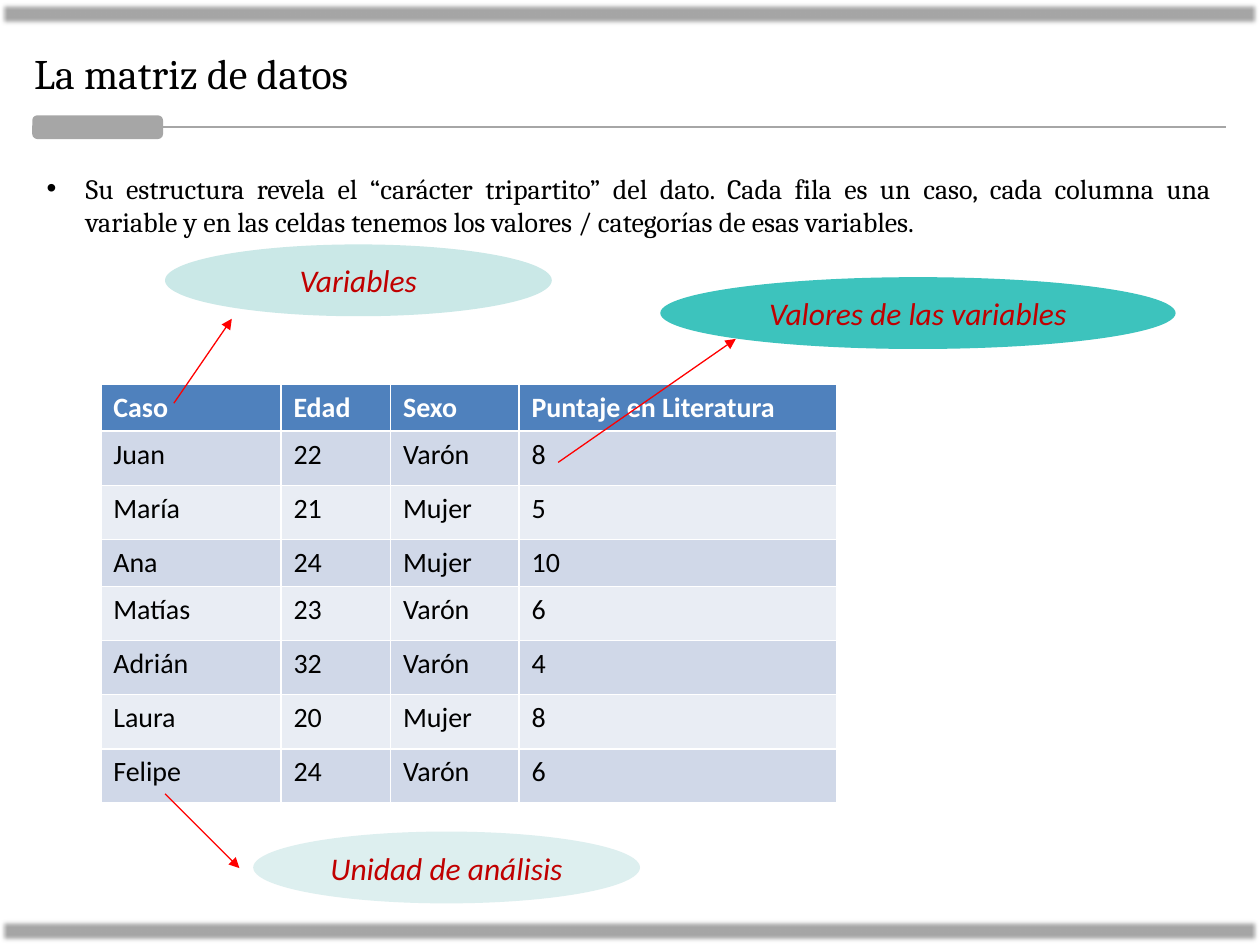
import pptx
import pptx.dml.color
import pptx.enum.shapes
import pptx.enum.text
import pptx.oxml.ns
import pptx.util
from lxml import etree
from pptx.util import Inches

GREY = "A6A6A6"
RED = "FF0000"
SHAPES = pptx.enum.shapes.MSO_SHAPE
ALIGN = pptx.enum.text.PP_ALIGN
ANCHOR = pptx.enum.text.MSO_ANCHOR

COLUMN_WIDTHS = [1.43, 0.87, 1.02, 2.52]
ROW_HEIGHTS = [0.37, 0.43, 0.43, 0.36, 0.43, 0.43, 0.43, 0.43]
CASES = [
    ("Caso", "Edad", "Sexo", "Puntaje en Literatura"),
    ("Juan", "22", "Varón", "8"),
    ("María", "21", "Mujer", "5"),
    ("Ana", "24", "Mujer", "10"),
    ("Matías", "23", "Varón", "6"),
    ("Adrián", "32", "Varón", "4"),
    ("Laura", "20", "Mujer", "8"),
    ("Felipe", "24", "Varón", "6"),
]
CALLOUTS = [
    ("Variables", (1.31, 1.94, 3.07, 0.57), "CAE8E7", (1.38, 3.2), (1.84, 2.53)),
    ("Unidad de análisis", (2.01, 6.6, 3.07, 0.57), "DDEFEF", (1.31, 6.3), (1.9, 6.89)),
    ("Valores de las variables", (5.24, 2.2, 4.09, 0.57), "3DC3BD", (4.43, 3.67), (5.84, 2.69)),
]


def color(value):
    return pptx.dml.color.RGBColor.from_string(value)


def add_child(parent, tag, **attributes):
    child = etree.SubElement(parent, pptx.oxml.ns.qn(tag))
    for name, value in attributes.items():
        child.set(name, str(value))
    return child


def place(shape, box):
    shape.left, shape.top, shape.width, shape.height = map(Inches, box)


def add_text(para, text, size, font, fill, bold=False, italic=False):
    span = para.add_run()
    span.text = text
    span.font.size = pptx.util.Pt(size)
    span.font.name = font
    span.font.bold = bold
    span.font.italic = italic
    span.font.color.rgb = color(fill)


def add_filled(page, kind, box, fill):
    shape = page.shapes.add_shape(kind, *map(Inches, box))
    shape.shadow.inherit = False
    shape.fill.solid()
    shape.fill.fore_color.rgb = color(fill)
    shape.line.fill.background()
    return shape


def add_line(page, start, end, fill, width):
    line = page.shapes.add_connector(
        pptx.enum.shapes.MSO_CONNECTOR.STRAIGHT, *map(Inches, start + end))
    line.line.color.rgb = color(fill)
    line.line.width = pptx.util.Pt(width)
    add_child(line._element.spPr, "a:effectLst")
    return line


def add_bar(page, box):
    bar = add_filled(page, SHAPES.RECTANGLE, box, GREY)
    effects = bar._element.spPr.find(pptx.oxml.ns.qn("a:effectLst"))
    add_child(effects, "a:softEdge", rad=pptx.util.Pt(2.5))


def fill_title(page, box):
    title = page.shapes.title
    place(title, box)
    frame = title.text_frame
    frame.auto_size = pptx.enum.text.MSO_AUTO_SIZE.NONE
    frame.vertical_anchor = ANCHOR.MIDDLE
    para = frame.paragraphs[0]
    para.alignment = ALIGN.LEFT
    add_text(para, "La matriz de datos", 24, "Cambria", "000000")


def add_divider(page, box):
    left, top, width, height = box
    tab = add_filled(page, SHAPES.ROUNDED_RECTANGLE, (left, top, 1.01, height), GREY)
    tab.line.color.rgb = color(GREY)
    tab.line.width = pptx.util.Pt(2)
    middle = top + height / 2
    add_line(page, (1.23, middle), (left + width, middle), GREY, 1.25)


def fill_body(page, box):
    body = page.placeholders[1]
    place(body, box)
    frame = body.text_frame
    frame.auto_size = pptx.enum.text.MSO_AUTO_SIZE.NONE
    para = frame.paragraphs[0]
    para.alignment = ALIGN.JUSTIFY
    para.space_before = pptx.util.Pt(0)
    properties = para._p.get_or_add_pPr()
    properties.set("marL", str(Inches(0.31)))
    properties.set("indent", str(Inches(-0.31)))
    add_child(properties, "a:buFont", typeface="Arial")
    add_child(properties, "a:buChar", char="•")
    add_text(para, "Su estructura revela el “carácter tripartito” del dato. Cada fila es un caso, "
             "cada columna una variable y en las celdas tenemos los valores / categorías de "
             "esas variables.", 16, "Cambria", "000000")


def add_cases(page, box):
    frame = page.shapes.add_table(len(CASES), len(COLUMN_WIDTHS), *map(Inches, box))
    table = frame.table
    for column, width in zip(table.columns, COLUMN_WIDTHS):
        column.width = Inches(width)
    for index, (row, height, values) in enumerate(zip(table.rows, ROW_HEIGHTS, CASES)):
        row.height = Inches(height)
        header = index == 0
        fill = "4F81BD" if header else ("E9EDF4", "D0D8E8")[index % 2]
        for cell, value in zip(row.cells, values):
            cell.fill.solid()
            cell.fill.fore_color.rgb = color(fill)
            add_text(cell.text_frame.paragraphs[0], value, 16, "Calibri",
                     "FFFFFF" if header else "000000", bold=header)


def add_callout(page, text, box, fill, start, end):
    arrow = add_line(page, start, end, RED, 0.75)
    add_child(arrow.line._get_or_add_ln(), "a:tailEnd", type="triangle")
    ellipse = add_filled(page, SHAPES.OVAL, box, fill)
    frame = ellipse.text_frame
    frame.word_wrap = True
    frame.vertical_anchor = ANCHOR.MIDDLE
    para = frame.paragraphs[0]
    para.alignment = ALIGN.CENTER
    add_text(para, text, 18, "Calibri", "C00000", italic=True)


def main():
    deck = pptx.Presentation()
    deck.slide_width = Inches(10)
    deck.slide_height = Inches(7.5)
    page = deck.slides.add_slide(deck.slide_layouts[1])
    for top in (0.01, 7.29):
        add_bar(page, (0, top, 10, 0.2))
    fill_title(page, (0.17, 0.33, 9.56, 0.5))
    add_divider(page, (0.27, 0.93, 9.46, 0.16))
    fill_body(page, (0.27, 1.31, 9.45, 0.64))
    add_cases(page, (0.8, 3.05, 5.84, 3.3))
    for callout in CALLOUTS:
        add_callout(page, *callout)
    deck.save("out.pptx")


if __name__ == "__main__":
    main()
